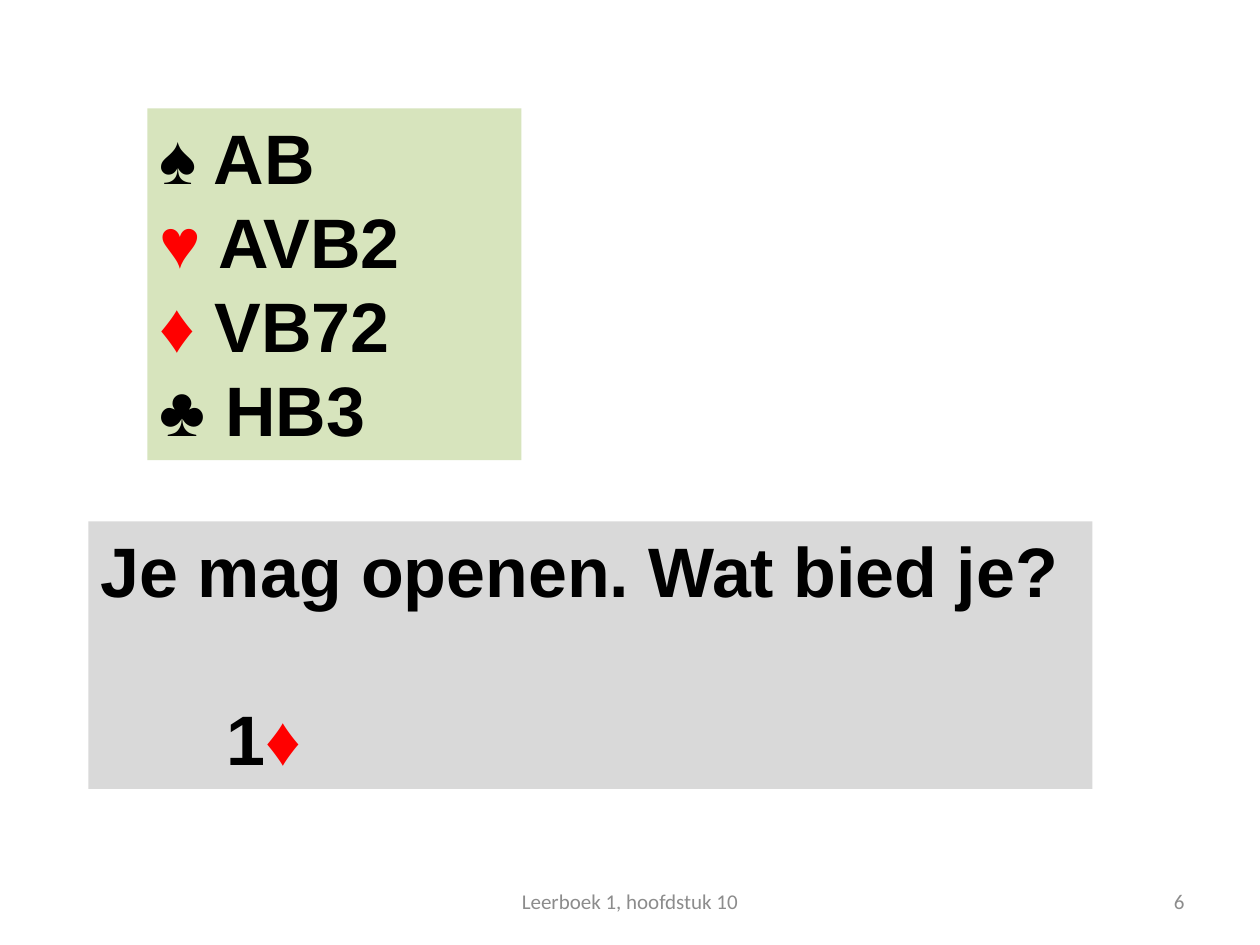
from pptx import Presentation
from pptx.dml.color import RGBColor
from pptx.enum import shapes, text
from pptx.util import Pt

COLOURS = {
    "hand": "D7E4BD",
    "question": "D9D9D9",
    "black": "000000",
    "red": "FF0000",
    "footer": "8C8C8C",
}
LARGE = {"size": Pt(40), "name": "Arial", "bold": True}
SMALL = {"size": Pt(12), "name": "Calibri"}
RED_SUITS = "♥♦"


def colour(name):
    return RGBColor.from_string(COLOURS[name])


def set_values(target, values):
    for name, value in values.items():
        setattr(target, name, value)


def add_span(para, words, font, ink):
    span = para.add_run()
    span.text = words
    set_values(span.font, font)
    span.font.color.rgb = colour(ink)


def add_panel(page, box, fill):
    panel = page.shapes.add_shape(shapes.MSO_SHAPE.RECTANGLE, *map(Pt, box))
    panel.shadow.inherit = False
    panel.fill.solid()
    panel.fill.fore_color.rgb = colour(fill)
    panel.line.fill.background()
    set_values(panel.text_frame, {"word_wrap": True, "vertical_anchor": text.MSO_ANCHOR.TOP})
    return panel.text_frame


def add_line(frame, index, pieces):
    para = frame.add_paragraph() if index else frame.paragraphs[0]
    para.alignment = text.PP_ALIGN.LEFT
    for piece in pieces:
        add_span(para, piece, LARGE, "red" if piece in RED_SUITS else "black")
    return para


def add_hand(page, box, suits):
    frame = add_panel(page, box, "hand")
    for index, (suit, cards) in enumerate(suits):
        add_line(frame, index, [suit, f" {cards}"])


def add_question(page, box, question, bid):
    frame = add_panel(page, box, "question")
    add_line(frame, 0, [question])
    answer = add_line(frame, 1, bid)
    answer.space_before = Pt(48)
    properties = answer._p.get_or_add_pPr()
    properties.set("marL", str(Pt(72)))
    properties.set("indent", "0")


def add_footer(page, box, words, alignment):
    frame = page.shapes.add_textbox(*map(Pt, box)).text_frame
    set_values(frame, {"word_wrap": True, "vertical_anchor": text.MSO_ANCHOR.MIDDLE})
    para = frame.paragraphs[0]
    para.alignment = alignment
    add_span(para, words, SMALL, "footer")


def main():
    deck = Presentation()
    set_values(deck, {"slide_width": Pt(720), "slide_height": Pt(540)})
    page = deck.slides.add_slide(deck.slide_layouts[6])
    suits = [("♠", "AB"), ("♥", "AVB2"), ("♦", "VB72"), ("♣", "HB3")]
    add_hand(page, (84.25, 61.9, 213.8, 201), suits)
    add_question(page, (50.5, 298, 573.8, 152.8), "Je mag openen. Wat bied je?", ["1", "♦"])
    add_footer(page, (516, 500.5, 168, 28.75), "6", text.PP_ALIGN.RIGHT)
    add_footer(page, (246, 500.5, 228, 28.75), "Leerboek 1, hoofdstuk 10", text.PP_ALIGN.CENTER)
    deck.save("out.pptx")


if __name__ == "__main__":
    main()
